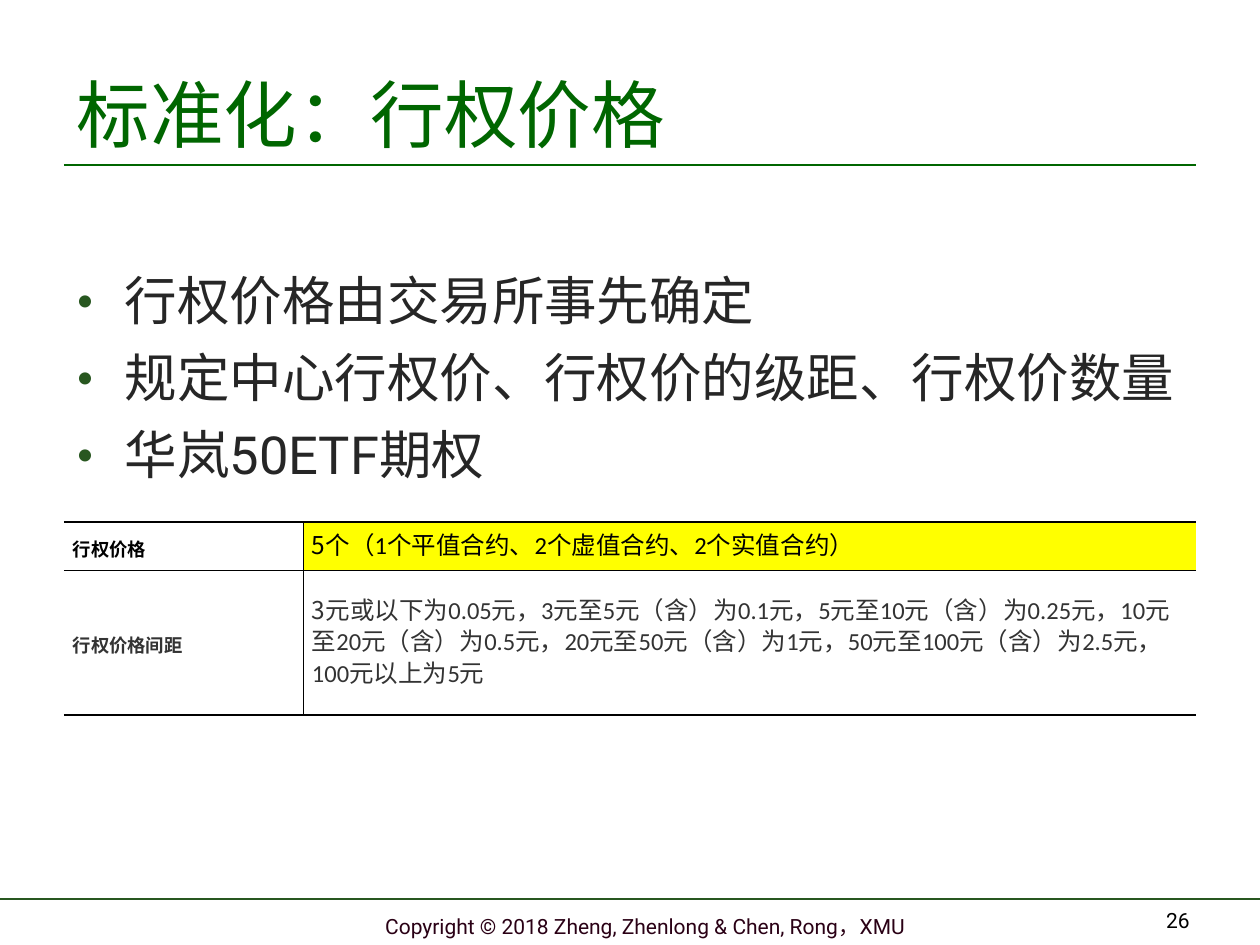
from typing import NamedTuple

from lxml.etree import SubElement
from pptx import Presentation
from pptx.dml.color import RGBColor
from pptx.enum.shapes import MSO_CONNECTOR
from pptx.enum.text import MSO_ANCHOR, MSO_AUTO_SIZE, PP_ALIGN
from pptx.oxml.ns import qn
from pptx.util import Emu, Pt

PX_PER_INCH = 126
GREEN, DARK_GREEN, INK = "006600", "285720", "262626"
BLACK, GREY, YELLOW, MAROON = "000000", "333333", "FFFF00", "2A0015"


class Area(NamedTuple):
    left: int
    top: int
    width: int
    height: int


class Span(NamedTuple):
    text: str
    size: float
    color: str
    font: str = "Roboto"
    bold: bool = False


class Term(NamedTuple):
    label: str
    first: str
    rest: str
    color: str
    fill: str | None
    height: int


TERMS = [
    Term("行权价格", "5", "个（1个平值合约、2个虚值合约、2个实值合约）", BLACK, YELLOW, 48),
    Term("行权价格间距", "3",
         "元或以下为0.05元，3元至5元（含）为0.1元，5元至10元（含）为0.25元，"
         "10元至20元（含）为0.5元，20元至50元（含）为1元，"
         "50元至100元（含）为2.5元，100元以上为5元", GREY, None, 145),
]
BULLETS = ["行权价格由交易所事先确定", "规定中心行权价、行权价的级距、行权价数量", "华岚50ETF期权"]
COLUMN_WIDTHS = [239, 893]


def px(value: int) -> Emu:
    return Emu(round(value * 914400 / PX_PER_INCH))


def rgb(value: str) -> RGBColor:
    return RGBColor.from_string(value)


def place(shape, area: Area) -> None:
    shape.left, shape.top, shape.width, shape.height = map(px, area)


def add_span(paragraph, span: Span) -> None:
    run = paragraph.add_run()
    run.text = span.text
    run.font.name, run.font.size, run.font.bold = span.font, Pt(span.size), span.bold
    run.font.color.rgb = rgb(span.color)


def add_rule(page, left: int, right: int, y: int, color: str) -> None:
    rule = page.shapes.add_connector(MSO_CONNECTOR.STRAIGHT, px(left), px(y), px(right), px(y))
    rule.line.color.rgb = rgb(color)
    rule.line.width = Pt(1)
    SubElement(rule._element.spPr, qn("a:effectLst"))


def add_label(page, area: Area, span: Span, align: PP_ALIGN) -> None:
    box = page.shapes.add_textbox(*map(px, area))
    frame = box.text_frame
    frame.word_wrap = True
    frame.vertical_anchor = MSO_ANCHOR.BOTTOM
    frame.paragraphs[0].alignment = align
    add_span(frame.paragraphs[0], span)


def fill_title(title) -> None:
    place(title, Area(64, 45, 1134, 117))
    frame = title.text_frame
    frame.auto_size = MSO_AUTO_SIZE.NONE
    frame.vertical_anchor = MSO_ANCHOR.BOTTOM
    frame.margin_bottom = px(5)
    frame.paragraphs[0].alignment = PP_ALIGN.LEFT
    add_span(frame.paragraphs[0], Span("标准化：行权价格", 42, GREEN))


def add_bullet(paragraph) -> None:
    properties = paragraph._p.get_or_add_pPr()
    properties.set("marL", str(px(48)))
    properties.set("indent", str(-px(48)))
    color = SubElement(properties, qn("a:buClr"))
    SubElement(color, qn("a:srgbClr"), val=DARK_GREEN)
    SubElement(properties, qn("a:buSzPct"), val="65000")
    SubElement(properties, qn("a:buFont"), typeface="Calibri")
    SubElement(properties, qn("a:buChar"), char="•")


def fill_body(body) -> None:
    place(body, Area(64, 262, 1134, 547))
    frame = body.text_frame
    frame.auto_size = MSO_AUTO_SIZE.NONE
    for index, text in enumerate(BULLETS):
        paragraph = frame.add_paragraph() if index else frame.paragraphs[0]
        add_bullet(paragraph)
        paragraph.line_spacing = Pt(36)
        paragraph.space_before = Pt(8 if index else 0)
        add_span(paragraph, Span(text, 30, INK))


def set_borders(cell, widths: dict[str, float]) -> None:
    """Draw the given sides (L, R, T, B; widths in points) and clear the others."""
    properties = cell._tc.get_or_add_tcPr()
    for side in "LRTB":
        width = widths.get(side, 0)
        line = SubElement(properties, qn(f"a:ln{side}"), w=str(Pt(width)))
        if width:
            fill = SubElement(line, qn("a:solidFill"))
            SubElement(fill, qn("a:srgbClr"), val=BLACK)
        else:
            SubElement(line, qn("a:noFill"))


def fill_cell(cell, spans: list[Span], fill: str | None, borders: dict[str, float]) -> None:
    set_borders(cell, borders)
    if fill:
        cell.fill.solid()
        cell.fill.fore_color.rgb = rgb(fill)
    else:
        cell.fill.background()
    cell.vertical_anchor = MSO_ANCHOR.MIDDLE
    cell.margin_left = cell.margin_right = px(9)
    cell.margin_top = cell.margin_bottom = 0
    paragraph = cell.text_frame.paragraphs[0]
    paragraph.line_spacing = Pt(17.9)
    for span in spans:
        add_span(paragraph, span)


def add_terms_table(page) -> None:
    area = Area(64, 522, sum(COLUMN_WIDTHS), sum(term.height for term in TERMS))
    table = page.shapes.add_table(len(TERMS), len(COLUMN_WIDTHS), *map(px, area)).table
    table.first_row = table.horz_banding = False
    for column, width in zip(table.columns, COLUMN_WIDTHS):
        column.width = px(width)
    for index, term in enumerate(TERMS):
        table.rows[index].height = px(term.height)
        edges = {"T": 0.5 if index else 1, "B": 1 if index == len(TERMS) - 1 else 0.5}
        label = [Span(term.label, 10.5, term.color, "Calibri", True)]
        detail = [Span(term.first, 14, term.color, "Noto Sans CJK SC"),
                  Span(term.rest, 14, term.color, "Calibri")]
        fill_cell(table.cell(index, 0), label, None, edges | {"R": 0.5})
        fill_cell(table.cell(index, 1), detail, term.fill, edges | {"L": 0.5})


def main() -> None:
    deck = Presentation()
    deck.slide_width, deck.slide_height = px(1260), px(945)
    page = deck.slides.add_slide(deck.slide_layouts[1])
    add_rule(page, 0, 1260, 899, DARK_GREEN)
    add_rule(page, 64, 1196, 165, GREEN)
    add_label(page, Area(352, 906, 586, 39),
              Span("Copyright © 2018 Zheng, Zhenlong & Chen, Rong，XMU", 12, MAROON),
              PP_ALIGN.CENTER)
    fill_title(page.shapes.title)
    fill_body(page.placeholders[1])
    add_label(page, Area(908, 900, 294, 39), Span("26", 12, BLACK), PP_ALIGN.RIGHT)
    add_terms_table(page)
    deck.save("out.pptx")


if __name__ == "__main__":
    main()
